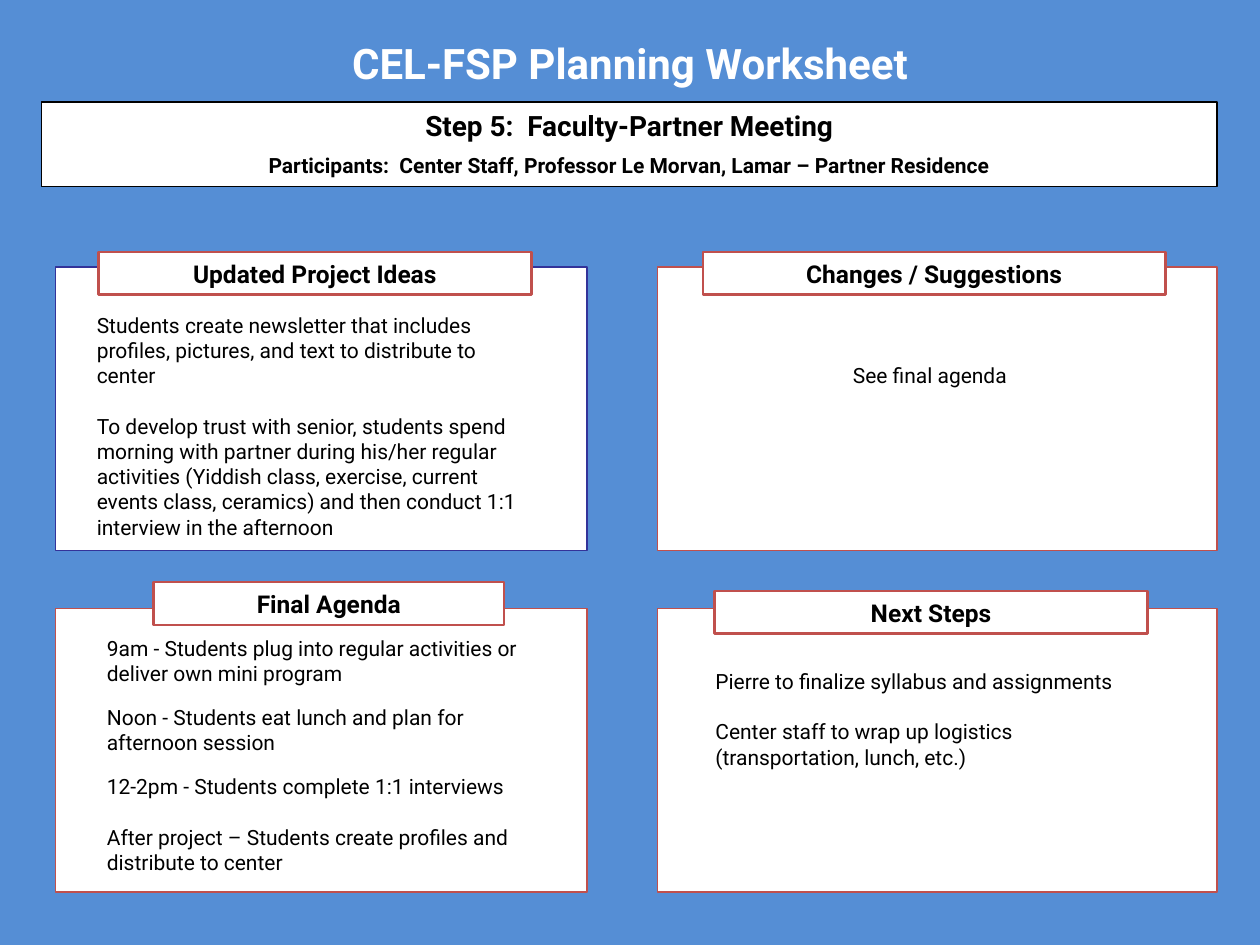
from dataclasses import dataclass

from pptx import Presentation
from pptx.dml.color import RGBColor
from pptx.enum import shapes, text
from pptx.util import Inches, Pt

CENTER, LEFT = text.PP_ALIGN.CENTER, text.PP_ALIGN.LEFT
TOP, MIDDLE = text.MSO_ANCHOR.TOP, text.MSO_ANCHOR.MIDDLE


@dataclass(frozen=True)
class Theme:
    font: str = "Roboto"
    background: str = "558ED5"
    paper: str = "FFFFFF"
    ink: str = "000000"
    red: str = "C0504D"
    navy: str = "333399"
    title: int = 24
    step: int = 16
    label: int = 14
    body: int = 12


THEME = Theme()


def rgb(value):
    return RGBColor.from_string(value)


def write(sp, paragraphs, align=LEFT, anchor=MIDDLE, color=THEME.ink, bold=False):
    """Fill a shape with (text, size, space before) paragraphs."""
    tf = sp.text_frame
    frame_format = {"word_wrap": True, "auto_size": text.MSO_AUTO_SIZE.NONE,
                    "vertical_anchor": anchor,
                    "margin_left": Inches(0.1), "margin_right": Inches(0.1),
                    "margin_top": Inches(0.05), "margin_bottom": Inches(0.05)}
    for name, value in frame_format.items():
        setattr(tf, name, value)
    for i, (words, size, before) in enumerate(paragraphs):
        p = tf.add_paragraph() if i else tf.paragraphs[0]
        p.alignment, p.space_before = align, Pt(before)
        r = p.add_run()
        r.text = words
        for name, value in {"name": THEME.font, "size": Pt(size), "bold": bold}.items():
            setattr(r.font, name, value)
        r.font.color.rgb = rgb(color)


def add_box(s, box, line, width):
    sp = s.shapes.add_shape(shapes.MSO_SHAPE.RECTANGLE, *map(Inches, box))
    sp.shadow.inherit = False
    sp.fill.solid()
    sp.fill.fore_color.rgb = rgb(THEME.paper)
    sp.line.color.rgb = rgb(line)
    sp.line.width = Pt(width)
    return sp


def add_title(s, box, words):
    sp = s.shapes.title
    for name, value in zip(("left", "top", "width", "height"), box):
        setattr(sp, name, Inches(value))
    write(sp, [(words, THEME.title, 0)], CENTER, TOP, THEME.paper, True)


def add_step(s, box, step, participants):
    sp = add_box(s, box, THEME.ink, 1)
    write(sp, [(step, THEME.step, 0), (participants, THEME.body, 6)],
          CENTER, TOP, bold=True)


def add_panel(s, box, label, label_box, body, body_box, line=THEME.red):
    """Draw a panel; the label and body boxes are offsets from its corner."""
    x, y = box[:2]

    def inside(part):
        dx, dy, w, h = part
        return x + dx, y + dy, w, h

    add_box(s, box, line, 0.75)
    write(add_box(s, inside(label_box), THEME.red, 1.5),
          [(label, THEME.label, 0)], CENTER, bold=True)
    write(s.shapes.add_textbox(*map(Inches, inside(body_box))),
          [(words, THEME.body, before) for words, before in body])


def main():
    prs = Presentation()
    prs.slide_width, prs.slide_height = Inches(10), Inches(7.5)
    s = prs.slides.add_slide(prs.slide_layouts[5])
    s.background.fill.solid()
    s.background.fill.fore_color.rgb = rgb(THEME.background)

    add_title(s, (0, 0.25, 10, 0.51), "CEL-FSP Planning Worksheet")
    add_step(s, (0.33, 0.81, 9.33, 0.67), "Step 5:  Faculty-Partner Meeting",
             "Participants:  Center Staff, Professor Le Morvan, Lamar – Partner Residence")

    columns, rows, height = ((0.44, 4.22), (5.22, 4.44)), (2.12, 4.83), 2.25
    (ideas, changes), (agenda, steps) = [
        [(x, y, w, height) for x, w in columns] for y in rows]
    line_gap, small_gap = 14.4, 10.8

    add_panel(s, ideas, "Updated Project Ideas", (0.34, -0.12, 3.44, 0.34), [
        ("Students create newsletter that includes profiles, pictures, and text "
         "to distribute to center", 0),
        ("To develop trust with senior, students spend morning with partner during "
         "his/her regular activities (Yiddish class, exercise, current events class, "
         "ceramics) and then conduct 1:1 interview in the afternoon", line_gap),
    ], (0.23, 0.3, 3.67, 1.92), THEME.navy)
    add_panel(s, changes, "Changes / Suggestions", (0.36, -0.12, 3.67, 0.34),
              [("See final agenda", 0)], (1.45, 0.71, 1.58, 0.3))
    add_panel(s, agenda, "Final Agenda", (0.78, -0.21, 2.78, 0.34), [
        ("9am - Students plug into regular activities or deliver own mini program", 0),
        ("Noon - Students eat lunch and plan for afternoon session", small_gap),
        ("12-2pm - Students complete 1:1 interviews", small_gap),
        ("After project – Students create profiles and distribute to center", line_gap),
    ], (0.31, 0.15, 3.67, 2.02))
    add_panel(s, steps, "Next Steps", (0.45, -0.14, 3.44, 0.34), [
        ("Pierre to finalize syllabus and assignments", 0),
        ("Center staff to wrap up logistics (transportation, lunch, etc.)", line_gap),
    ], (0.36, 0.42, 3.67, 0.91))

    prs.save("out.pptx")


if __name__ == "__main__":
    main()
